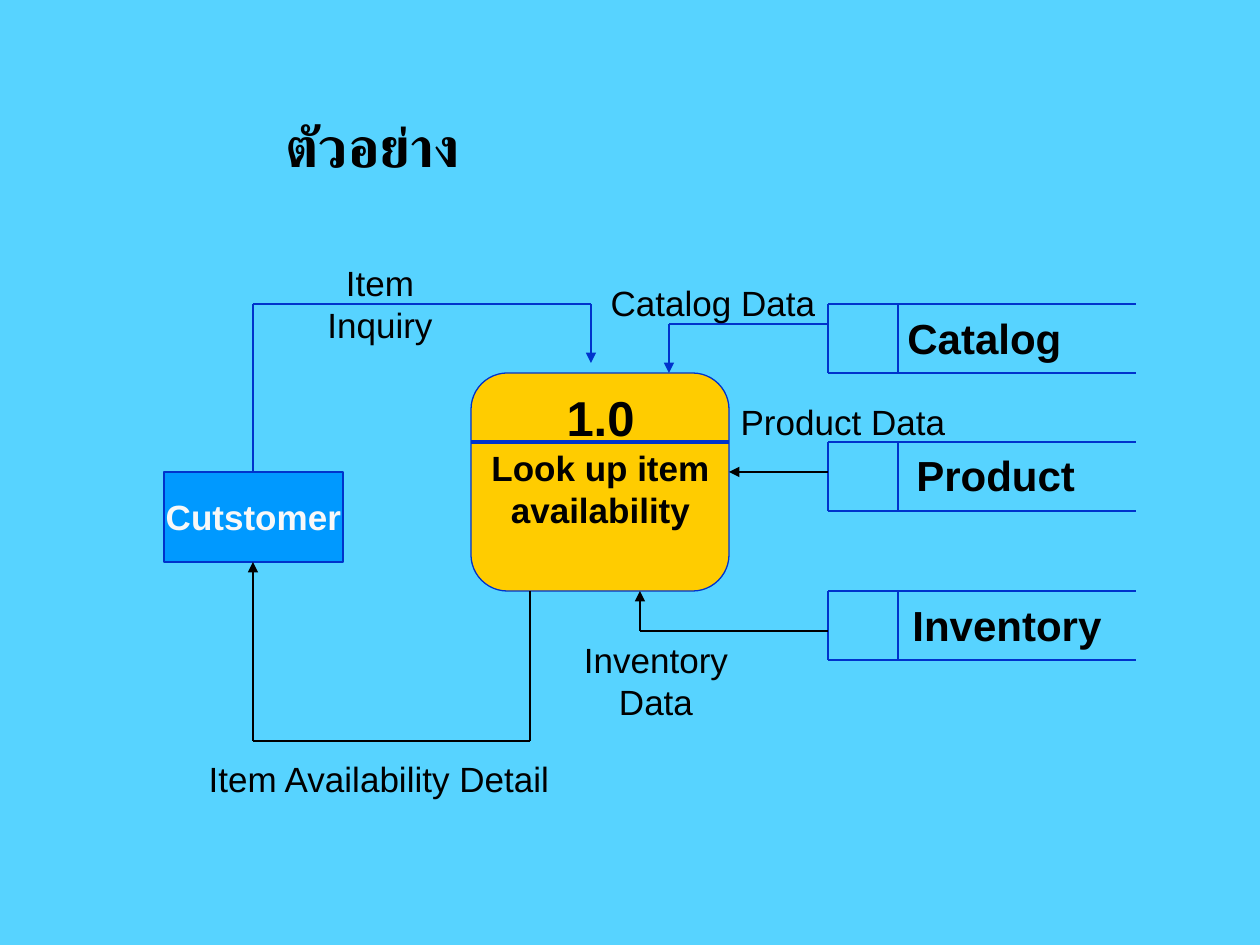
from dataclasses import dataclass
from itertools import pairwise

import pptx
import pptx.dml.color
import pptx.enum.shapes
import pptx.enum.text
import pptx.oxml
import pptx.oxml.ns
import pptx.util

PX = 914400 / 126
BLUE, BLACK = "0033CC", "000000"
LEFT = pptx.enum.text.PP_ALIGN.LEFT
CENTER = pptx.enum.text.PP_ALIGN.CENTER
SHAPES = pptx.enum.shapes.MSO_SHAPE


@dataclass(frozen=True)
class Frame:
    left: int
    top: int
    width: int
    height: int

    def lengths(self) -> list[int]:
        return [px(n) for n in (self.left, self.top, self.width, self.height)]


@dataclass(frozen=True)
class Line:
    text: str
    size: int = 20
    bold: bool = False
    color: str = BLACK
    align: int = CENTER
    font: str = "Arial"


@dataclass(frozen=True)
class Label:
    frame: Frame
    lines: tuple[Line, ...]


@dataclass(frozen=True)
class Store:
    top: int
    label: Label


@dataclass(frozen=True)
class Route:
    points: tuple[tuple[int, int], ...]
    color: str = BLACK
    weight: float = 0.75
    arrow: bool = True


def px(count: int) -> int:
    return round(count * PX)


def rgb(value: str) -> pptx.dml.color.RGBColor:
    return pptx.dml.color.RGBColor.from_string(value)


def apply(target, values: dict) -> None:
    for name, value in values.items():
        setattr(target, name, value)


def write(box, lines: tuple[Line, ...]) -> None:
    for index, line in enumerate(lines):
        para = box.paragraphs[0] if index == 0 else box.add_paragraph()
        para.alignment = line.align
        for row, text in enumerate(line.text.split("\n")):
            if row:
                para.add_line_break()
            span = para.add_run()
            span.text = text
            apply(span.font, {"name": line.font, "size": pptx.util.Pt(line.size), "bold": line.bold})
            span.font.color.rgb = rgb(line.color)


def draw_title(page, frame: Frame, line: Line) -> None:
    title = page.shapes.title
    apply(title, dict(zip(("left", "top", "width", "height"), frame.lengths())))
    apply(title.text_frame, {
        "vertical_anchor": pptx.enum.text.MSO_ANCHOR.MIDDLE,
        "auto_size": pptx.enum.text.MSO_AUTO_SIZE.NONE,
    })
    write(title.text_frame, (line,))
    para = title.text_frame.paragraphs[0]
    para.line_spacing = 0.9
    properties = para.runs[0].font._element
    complex_font = pptx.oxml.parse_xml(
        f'<a:cs {pptx.oxml.ns.nsdecls("a")} typeface="{line.font}"/>')
    properties.append(complex_font)


def draw_label(page, label: Label) -> None:
    box = page.shapes.add_textbox(*label.frame.lengths()).text_frame
    apply(box, {"word_wrap": False, "auto_size": pptx.enum.text.MSO_AUTO_SIZE.SHAPE_TO_FIT_TEXT})
    write(box, label.lines)


def draw_block(page, kind: int, frame: Frame, fill: str):
    block = page.shapes.add_shape(kind, *frame.lengths())
    block.shadow.inherit = False
    block.fill.solid()
    block.fill.fore_color.rgb = rgb(fill)
    block.line.color.rgb = rgb(BLUE)
    block.line.width = pptx.util.Pt(0.75)
    return block


def draw_route(page, route: Route) -> None:
    for start, end in pairwise(route.points):
        connector = page.shapes.add_connector(
            pptx.enum.shapes.MSO_CONNECTOR.STRAIGHT, *map(px, start + end))
        connector.line.color.rgb = rgb(route.color)
        connector.line.width = pptx.util.Pt(route.weight)
        properties = connector._element.spPr
        properties.append(pptx.oxml.parse_xml(f'<a:effectLst {pptx.oxml.ns.nsdecls("a")}/>'))
        if route.arrow and end == route.points[-1]:
            connector.line._get_or_add_ln().append(pptx.oxml.parse_xml(
                f'<a:tailEnd {pptx.oxml.ns.nsdecls("a")} type="triangle"/>'))


def draw_store(page, store: Store) -> None:
    left, divider, right = 828, 898, 1136
    top, bottom = store.top, store.top + 69
    draw_route(page, Route(((right, top), (left, top), (left, bottom), (right, bottom)), BLUE, arrow=False))
    draw_route(page, Route(((divider, top), (divider, bottom)), BLUE, arrow=False))
    draw_label(page, store.label)


STORES = (
    Store(304, Label(Frame(895, 306, 179, 63), (Line("Catalog", 24, True, align=LEFT),))),
    Store(442, Label(Frame(904, 443, 184, 63), (Line("Product", 24, True, align=LEFT),))),
    Store(591, Label(Frame(900, 593, 214, 63), (Line("Inventory", 24, True),))),
)
ROUTES = (
    Route(((253, 472), (253, 304), (591, 304), (591, 363)), BLUE),
    Route(((828, 324), (669, 324), (669, 373)), BLUE),
    Route(((828, 472), (729, 472))),
    Route(((828, 631), (640, 631), (640, 591))),
    Route(((530, 591), (530, 741), (253, 741), (253, 562))),
    Route(((471, 442), (729, 442)), BLUE, 2.25, False),
)
LABELS = (
    Label(Frame(479, 381, 243, 155), (
        Line("1.0", 28, True), Line("Look up item\navailability", bold=True))),
    Label(Frame(588, 275, 250, 54), (Line("Catalog Data"),)),
    Label(Frame(718, 394, 250, 54), (Line("Product Data"),)),
    Label(Frame(571, 632, 170, 97), (Line("Inventory\nData"),)),
    Label(Frame(315, 255, 130, 97), (Line("Item\nInquiry"),)),
    Label(Frame(184, 751, 390, 54), (Line("Item Availability Detail"),)),
)


def main() -> None:
    deck = pptx.Presentation()
    apply(deck, {"slide_width": px(1260), "slide_height": px(945)})
    page = deck.slides.add_slide(deck.slide_layouts[5])
    page.background.fill.solid()
    page.background.fill.fore_color.rgb = rgb("57D3FF")
    draw_title(page, Frame(273, 113, 798, 73),
               Line("ตัวอย่าง", 32, True, align=LEFT, font="League Spartan"))
    customer = draw_block(page, SHAPES.RECTANGLE, Frame(164, 472, 179, 90), "0099FF").text_frame
    apply(customer, {"word_wrap": False, "vertical_anchor": pptx.enum.text.MSO_ANCHOR.MIDDLE})
    write(customer, (Line("Cutstomer", bold=True, color="F8F8F8"),))
    process = draw_block(page, SHAPES.ROUNDED_RECTANGLE, Frame(471, 373, 258, 218), "FFCC00")
    process.adjustments[0] = 0.167
    for store in STORES:
        draw_store(page, store)
    for route in ROUTES:
        draw_route(page, route)
    for label in LABELS:
        draw_label(page, label)
    deck.save("out.pptx")


if __name__ == "__main__":
    main()
